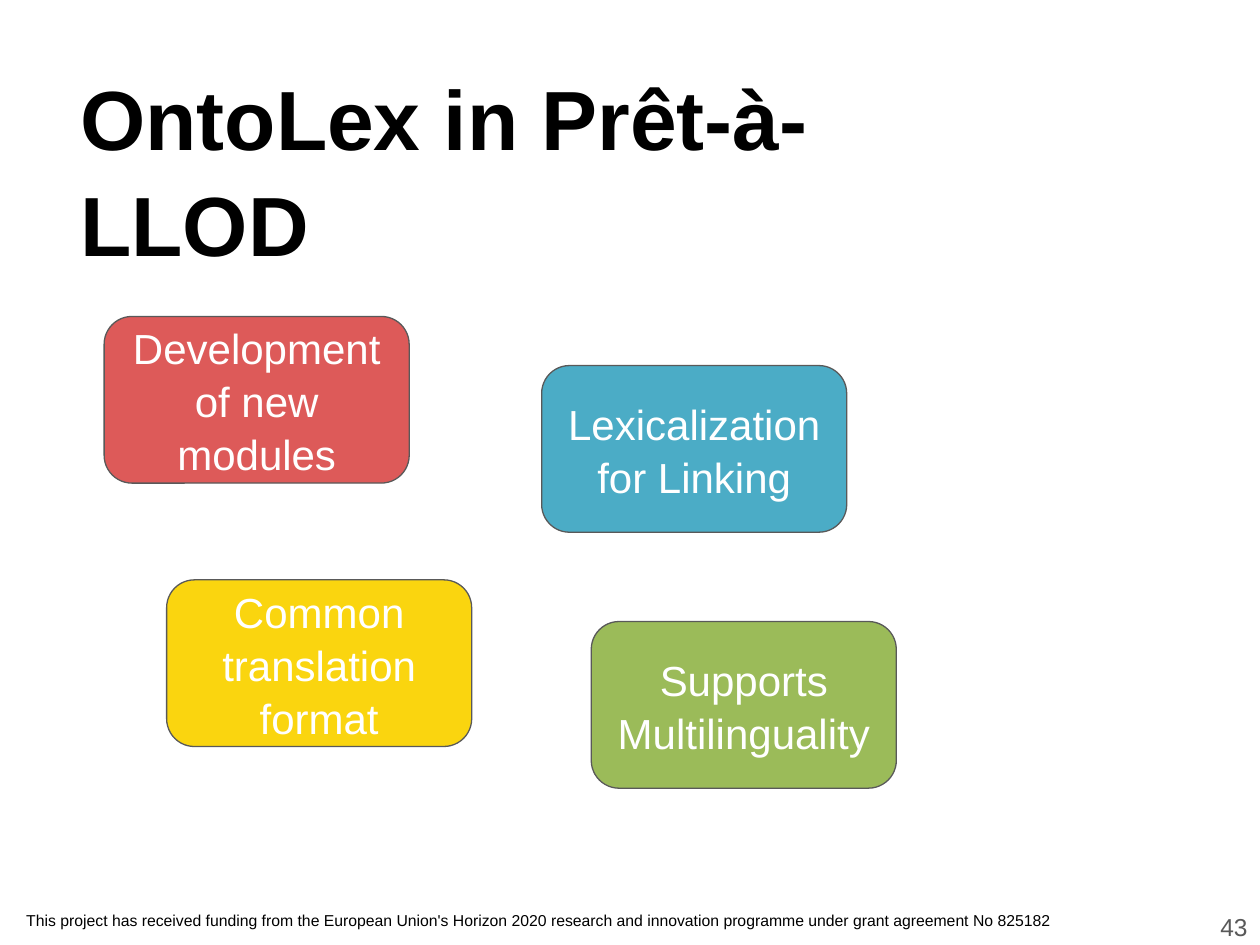
import pptx
import pptx.util
from pptx.dml.color import RGBColor
from pptx.enum.shapes import MSO_SHAPE
from pptx.enum.text import MSO_ANCHOR, PP_ALIGN
from pptx.util import Cm, Pt

BLACK = RGBColor(0x00, 0x00, 0x00)
GREY = RGBColor(0x59, 0x59, 0x59)
WHITE = RGBColor(0xFF, 0xFF, 0xFF)
RED = RGBColor(0xDD, 0x5A, 0x59)
YELLOW = RGBColor(0xFA, 0xD5, 0x0F)
BLUE = RGBColor(0x4B, 0xAC, 0xC6)
GREEN = RGBColor(0x9B, 0xBB, 0x59)

# Content, with lengths in cm
TITLE = "OntoLex in Prêt-à-LLOD"
FUNDING = ("This project has received funding from the European Union's Horizon 2020 "
           "research and innovation programme under grant agreement No 825182")
PAGE_NUMBER = "43"
TOPICS = [  # text, left, top, fill
    ("Development of new modules", 2.1, 6.38, RED),
    ("Common translation format", 3.36, 11.69, YELLOW),
    ("Lexicalization for Linking", 10.92, 7.37, BLUE),
    ("Supports Multilinguality", 11.92, 12.53, GREEN),
]
TOPIC_WIDTH, TOPIC_HEIGHT = 6.15, 3.36
INSET = Cm(0.25)


def write(shape, text, size, color, align=PP_ALIGN.LEFT,
          anchor=MSO_ANCHOR.MIDDLE, bold=False, spacing=1.0):
    frame = shape.text_frame
    frame.text = text
    frame.word_wrap = True
    frame.vertical_anchor = anchor
    frame.margin_left = frame.margin_right = INSET
    frame.margin_top = frame.margin_bottom = INSET
    paragraph = frame.paragraphs[0]
    paragraph.alignment = align
    paragraph.line_spacing = spacing
    font = paragraph.runs[0].font
    font.name, font.size, font.bold = "Arial", Pt(size), bold
    font.color.rgb = color


deck = pptx.Presentation()
deck.slide_width, deck.slide_height = Cm(25.4), Cm(19.05)
slide = deck.slides.add_slide(deck.slide_layouts[5])

# Funding note
funding = slide.shapes.add_textbox(Cm(0.28), Cm(18.16), Cm(21.39), Cm(0.66))
write(funding, FUNDING, 9, BLACK, anchor=MSO_ANCHOR.TOP)

# Title
title = slide.shapes.title
title.left, title.top, title.width, title.height = Cm(1.37), Cm(1.68), Cm(17.68), Cm(3.38)
write(title, TITLE, 48, BLACK, bold=True, spacing=1.05)

# Page number
page_number = slide.shapes.add_textbox(Cm(23.88), Cm(17.96), Cm(1.52), Cm(1.45))
write(page_number, PAGE_NUMBER, 14, GREY, align=PP_ALIGN.RIGHT)

# Topic boxes
for text, left, top, fill in TOPICS:
    topic = slide.shapes.add_shape(MSO_SHAPE.ROUNDED_RECTANGLE, Cm(left), Cm(top),
                                   Cm(TOPIC_WIDTH), Cm(TOPIC_HEIGHT))
    topic.shadow.inherit = False
    topic.fill.solid()
    topic.fill.fore_color.rgb = fill
    topic.line.color.rgb = GREY
    topic.line.width = Pt(0.75)
    write(topic, text, 24, WHITE, align=PP_ALIGN.CENTER, spacing=1.05)

deck.save("out.pptx")
